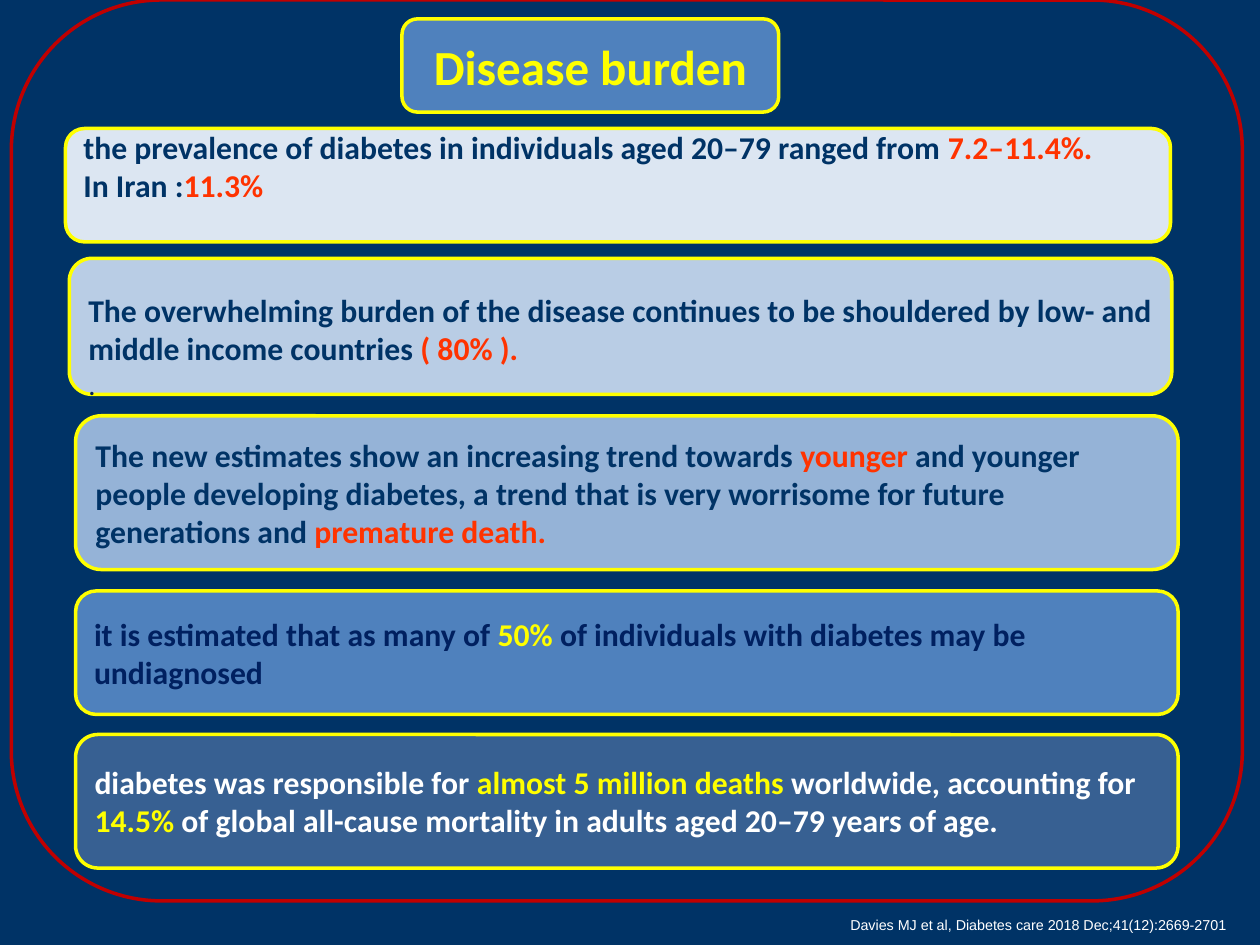
from pptx import Presentation
from pptx.dml.color import RGBColor
from pptx.enum import shapes, text
from pptx.util import Inches, Pt

COLORS = {
    "background": "003366", "frame": "C00000", "yellow": "FFFF00",
    "navy": "003366", "dark": "002060", "orange": "FF3300", "white": "FFFFFF",
    "blue1": "DCE6F2", "blue2": "B9CDE5", "blue3": "95B3D7",
    "blue4": "4F81BD", "blue5": "376092",
}
BODY_SIZE = 18.1
LINE = 0.31  # height of one body line, in inches

# Each panel: place, fill, top and bottom insets, paragraphs of (words, colour)
PANELS = [
    ((0.55, 2.05, 8.75, 1.08), "blue2", (LINE, 0), [
        [("The overwhelming burden of the disease continues to be shouldered "
          "by low- and middle income countries ", "navy"),
         ("( 80% ).", "orange")],
        [(".", "dark")]]),
    ((0.6, 3.3, 8.75, 1.22), "blue3", (0.05, 0.05), [
        [("The new estimates show an increasing trend towards ", "navy"),
         ("younger", "orange"),
         (" and younger people developing diabetes, a trend that is very "
          "worrisome for future generations and ", "navy"),
         ("premature death.", "orange")]]),
    ((0.52, 1.02, 8.77, 0.9), "blue1", (0, LINE), [
        [("the prevalence of diabetes in individuals aged 20–79 ranged from ",
          "navy"), ("7.2–11.4%.", "orange")],
        [("In Iran :", "navy"), ("11.3%", "orange")]]),
    ((0.6, 4.69, 8.75, 0.98), "blue4", (0.05, 0.05), [
        [("it is estimated that as many of ", "dark"), ("50% ", "yellow"),
         ("of individuals with diabetes may be undiagnosed", "dark")]]),
    ((0.6, 5.83, 8.75, 1.06), "blue5", (0.05, 0.05), [
        [("diabetes was responsible for ", "white"),
         ("almost 5 million deaths ", "yellow"),
         ("worldwide, accounting for ", "white"), ("14.5% ", "yellow"),
         ("of global all-cause mortality in adults aged 20–79 years of age.",
          "white")]]),
]


def rgb(name):
    return RGBColor.from_string(COLORS[name])


def style_run(run, color, size, bold=True, font="Calibri"):
    run.font.name = font
    run.font.size = Pt(size)
    run.font.bold = bold
    run.font.color.rgb = rgb(color)


def add_rounded(slide, place, line, fill=None):
    box = slide.shapes.add_shape(
        shapes.MSO_SHAPE.ROUNDED_RECTANGLE, *map(Inches, place))
    box.shadow.inherit = False
    box.line.color.rgb = rgb(line)
    box.line.width = Pt(2)
    if fill:
        box.fill.solid()
        box.fill.fore_color.rgb = rgb(fill)
    else:
        box.fill.background()
    return box


def add_panel(slide, place, fill, insets, paragraphs,
              size=BODY_SIZE, align=text.PP_ALIGN.LEFT):
    frame = add_rounded(slide, place, "yellow", fill).text_frame
    frame.word_wrap = True
    frame.vertical_anchor = text.MSO_ANCHOR.MIDDLE
    frame.margin_top, frame.margin_bottom = map(Inches, insets)
    for index, pieces in enumerate(paragraphs):
        paragraph = frame.add_paragraph() if index else frame.paragraphs[0]
        paragraph.alignment = align
        for words, color in pieces:
            run = paragraph.add_run()
            run.text = words
            lone_dot = words == "."
            style_run(run, color, 16.3 if lone_dot else size, not lone_dot)


def add_citation(slide):
    citation = slide.shapes.add_textbox(
        Inches(6.65), Inches(7.22), Inches(3.21), Inches(0.24)).text_frame
    citation.word_wrap = False
    citation.auto_size = text.MSO_AUTO_SIZE.SHAPE_TO_FIT_TEXT
    citation.text = "Davies MJ et al, Diabetes care 2018 Dec;41(12):2669-2701"
    style_run(citation.paragraphs[0].runs[0], "white", 8.2, False, "Arial")


def main():
    deck = Presentation()
    deck.slide_width, deck.slide_height = Inches(10), Inches(7.5)
    slide = deck.slides.add_slide(deck.slide_layouts[6])
    slide.background.fill.solid()
    slide.background.fill.fore_color.rgb = rgb("background")

    # Citation and outer frame
    add_citation(slide)
    add_rounded(slide, (0.09, 0, 9.77, 7.15), "frame")

    # Facts
    for panel in PANELS:
        add_panel(slide, *panel)

    # Title
    add_panel(slide, (3.19, 0.15, 2.99, 0.74), "blue4", (0.05, 0.05),
              [[("Disease burden", "yellow")]], 28, text.PP_ALIGN.CENTER)

    deck.save("out.pptx")


if __name__ == "__main__":
    main()
